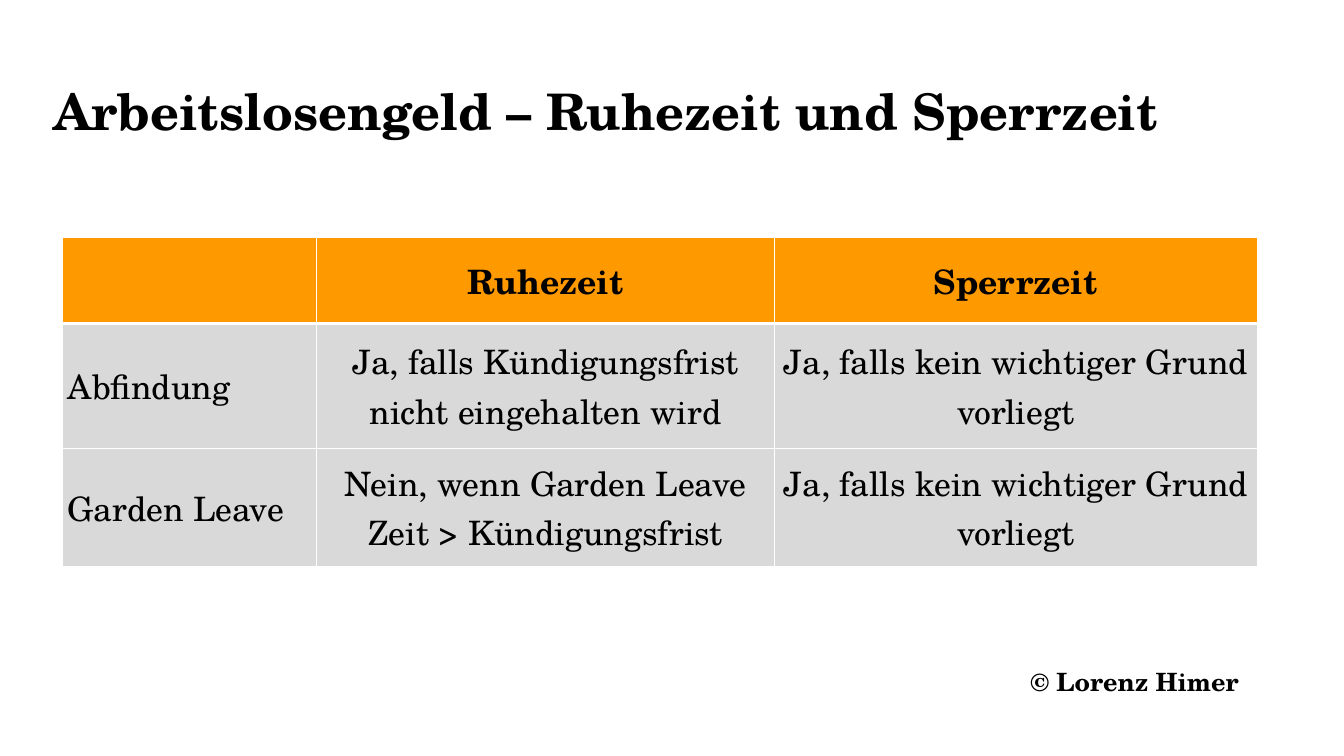
from lxml.etree import SubElement
from pptx import Presentation
from pptx.dml.color import RGBColor as RGB
from pptx.enum.text import MSO_ANCHOR as Anchor, MSO_AUTO_SIZE as Auto, PP_ALIGN as Align
from pptx.oxml.ns import qn
from pptx.util import Inches, Pt

COLORS = {"text": "000000", "head": "FF9900", "body": "D9D9D9", "line": "FFFFFF"}
FONT = "TeX Gyre Schola"
PAD = Inches(0.05)


def style(frame, size, bold):
    for para in frame.paragraphs:
        for run in para.runs:
            font = run.font
            font.name, font.size, font.bold = FONT, Pt(size), bold
            font.color.rgb = RGB.from_string(COLORS["text"])


def edge(cell, side, width):
    """Draw one border of a cell; side is L, R, T or B."""
    line = SubElement(cell._tc.get_or_add_tcPr(), qn(f"a:ln{side}"), w=str(Pt(width)))
    fill = SubElement(line, qn("a:solidFill"))
    SubElement(fill, qn("a:srgbClr"), val=COLORS["line"])


prs = Presentation()
prs.slide_width, prs.slide_height = Inches(13.33), Inches(7.5)
slide = prs.slides.add_slide(prs.slide_layouts[6])

# Title and author line
for text, size, box in [
    ("Arbeitslosengeld – Ruhezeit und Sperrzeit", 36, (0.48, 0.75, 12.4, 0.67)),
    ("© Lorenz Himer", 18, (10.17, 6.56, 2.54, 0.39)),
]:
    frame = slide.shapes.add_textbox(*map(Inches, box)).text_frame
    frame.text = text
    frame.word_wrap = True
    frame.auto_size = Auto.SHAPE_TO_FIT_TEXT
    frame.margin_left = frame.margin_right = PAD
    frame.margin_top = frame.margin_bottom = PAD
    style(frame, size, True)

# Table
rows = [
    ("", "Ruhezeit", "Sperrzeit"),
    ("Abfindung", "Ja, falls Kündigungsfrist nicht eingehalten wird",
     "Ja, falls kein wichtiger Grund vorliegt"),
    ("Garden Leave", "Nein, wenn Garden Leave Zeit > Kündigungsfrist",
     "Ja, falls kein wichtiger Grund vorliegt"),
]
widths = [2.52, 4.54, 4.79]
heights = [0.85, 1.24, 1.17]
table = slide.shapes.add_table(
    len(rows), len(widths), Inches(0.62), Inches(2.36),
    Inches(sum(widths)), Inches(sum(heights))).table
for col, width in zip(table.columns, widths):
    col.width = Inches(width)
for row, height in zip(table.rows, heights):
    row.height = Inches(height)

for r, row in enumerate(rows):
    for c, text in enumerate(row):
        cell = table.cell(r, c)
        cell.text = text
        cell.vertical_anchor = Anchor.MIDDLE
        cell.margin_left = cell.margin_right = PAD
        cell.margin_top = cell.margin_bottom = PAD
        cell.text_frame.paragraphs[0].alignment = Align.CENTER if c else Align.LEFT
        style(cell.text_frame, 24, r == 0)
        for side in "LRTB":
            thick = (r == 0 and side == "B") or (r == 1 and side == "T")
            edge(cell, side, 3 if thick else 1)
        cell.fill.solid()
        cell.fill.fore_color.rgb = RGB.from_string(COLORS["body" if r else "head"])

prs.save("out.pptx")
